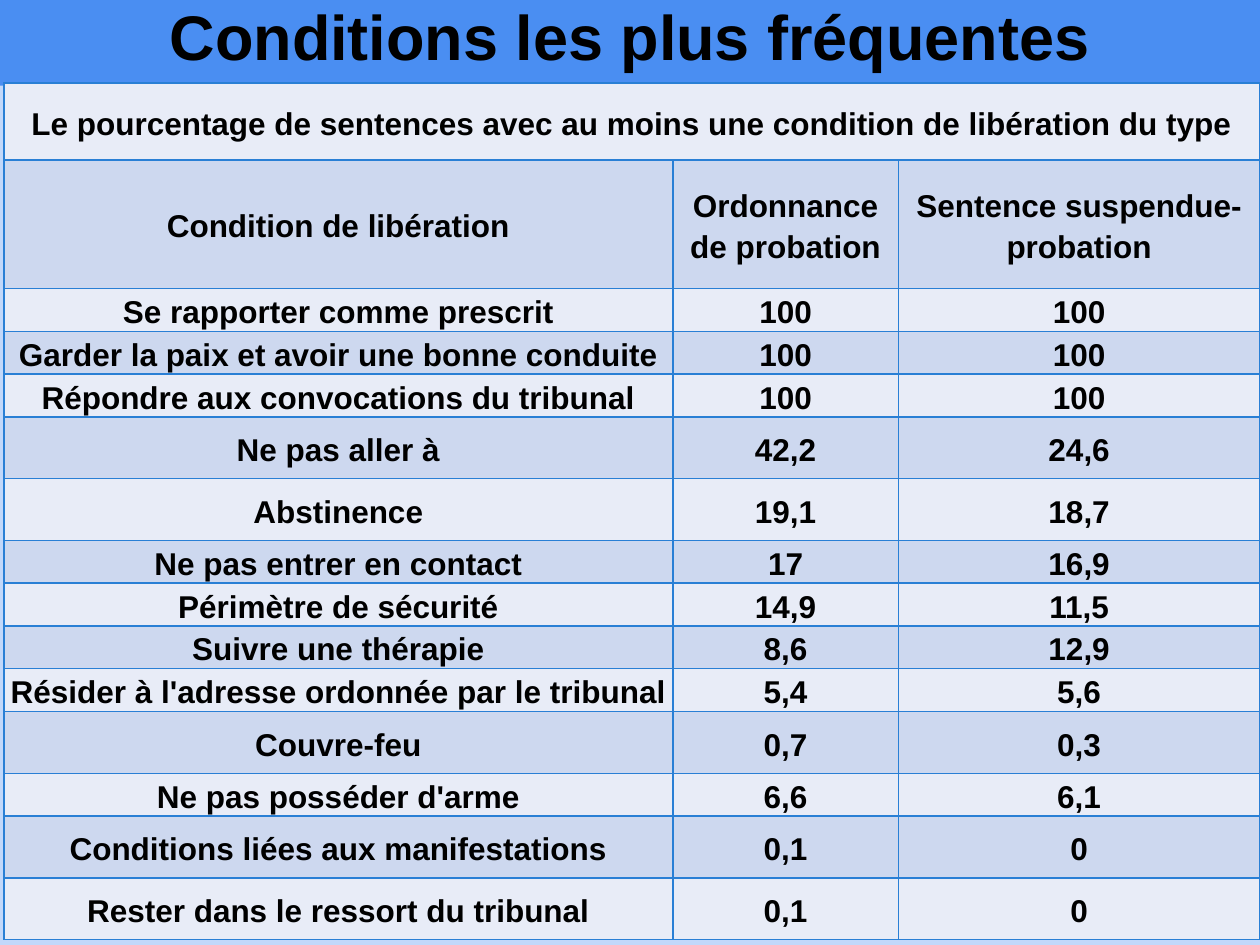
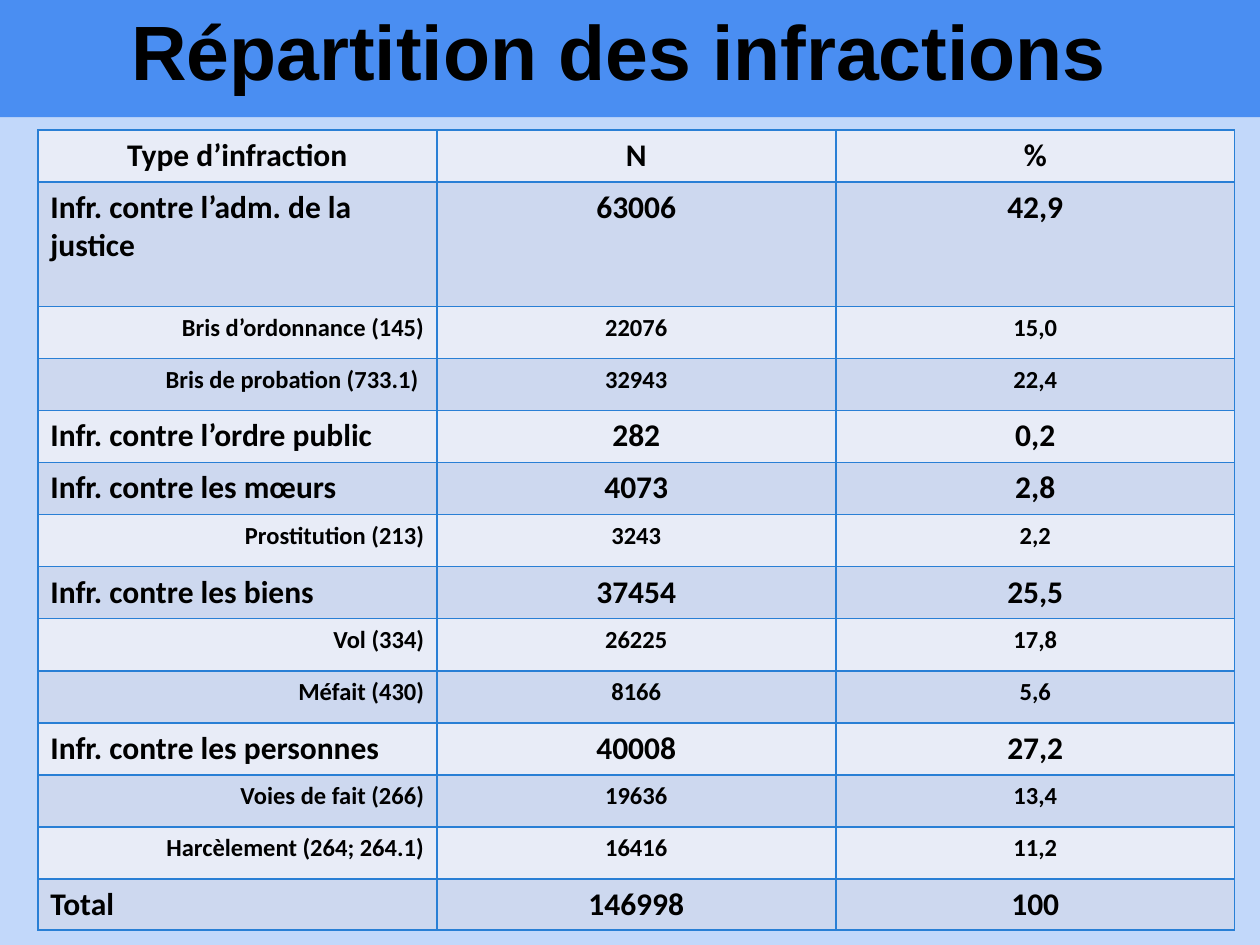
from lxml import etree
from pptx import Presentation
from pptx.dml.color import RGBColor
from pptx.enum.text import MSO_ANCHOR, MSO_AUTO_SIZE, PP_ALIGN
from pptx.oxml.ns import qn
from pptx.util import Inches, Pt

LEFT, CENTER, RIGHT = PP_ALIGN.LEFT, PP_ALIGN.CENTER, PP_ALIGN.RIGHT
TOP, MIDDLE = MSO_ANCHOR.TOP, MSO_ANCHOR.MIDDLE
NO_AUTOFIT = MSO_AUTO_SIZE.NONE
TITLE_ONLY = 5

COLORS = {
    "background": "C2D8FA",
    "band": "4A8EF2",
    "text": "000000",
    "light_row": "E8ECF7",
    "dark_row": "CDD8EF",
    "border": "297FD5",
}

CONDITIONS = [
    ("Le pourcentage de sentences avec au moins une condition de libération du type", "", ""),
    ("Condition de libération", "Ordonnance de probation", "Sentence suspendue- probation"),
    ("Se rapporter comme prescrit", "100", "100"),
    ("Garder la paix et avoir une bonne conduite", "100", "100"),
    ("Répondre aux convocations du tribunal", "100", "100"),
    ("Ne pas aller à", "42,2", "24,6"),
    ("Abstinence", "19,1", "18,7"),
    ("Ne pas entrer en contact", "17", "16,9"),
    ("Périmètre de sécurité", "14,9", "11,5"),
    ("Suivre une thérapie", "8,6", "12,9"),
    ("Résider à l'adresse ordonnée par le tribunal", "5,4", "5,6"),
    ("Couvre-feu", "0,7", "0,3"),
    ("Ne pas posséder d'arme", "6,6", "6,1"),
    ("Conditions liées aux manifestations", "0,1", "0"),
    ("Rester dans le ressort du tribunal", "0,1", "0"),
]
TALL_CONDITIONS = {
    "Ne pas aller à", "Abstinence", "Couvre-feu",
    "Conditions liées aux manifestations", "Rester dans le ressort du tribunal",
}

OFFENCES = [
    ("Type d’infraction", "N", "%"),
    ("Infr. contre l’adm. de la justice", "63006", "42,9"),
    ("Bris d’ordonnance (145)", "22076", "15,0"),
    ("Bris de probation (733.1) ", "32943", "22,4"),
    ("Infr. contre l’ordre public", "282", "0,2"),
    ("Infr. contre les mœurs", "4073", "2,8"),
    ("Prostitution (213)", "3243", "2,2"),
    ("Infr. contre les biens", "37454", "25,5"),
    ("Vol (334)", "26225", "17,8"),
    ("Méfait (430)", "8166", "5,6"),
    ("Infr. contre les personnes", "40008", "27,2"),
    ("Voies de fait (266)", "19636", "13,4"),
    ("Harcèlement (264; 264.1)", "16416", "11,2"),
    ("Total", "146998", "100"),
]


def rgb(name):
    return RGBColor.from_string(COLORS[name])


class DeckBuilder:
    def __init__(self):
        self.deck = Presentation()
        self.deck.slide_width, self.deck.slide_height = Inches(10), Inches(7.5)
        self.page = None

    def add_page(self, title, band_height, size):
        """Start a slide with its title band."""
        self.page = self.deck.slides.add_slide(self.deck.slide_layouts[TITLE_ONLY])
        background = self.page.background.fill
        background.solid()
        background.fore_color.rgb = rgb("background")
        box = self.page.shapes.title
        box.left, box.top = Inches(0), Inches(0)
        box.width, box.height = Inches(10), Inches(band_height)
        box.fill.solid()
        box.fill.fore_color.rgb = rgb("band")
        frame = box.text_frame
        frame.text = title
        frame.auto_size = NO_AUTOFIT
        frame.vertical_anchor = MIDDLE
        self.format_paragraph(frame.paragraphs[0], "Arial", size, CENTER, 0.8)

    def format_paragraph(self, para, font_name, size, align, line_spacing=1.0):
        para.alignment = align
        para.line_spacing = line_spacing
        font = para.font
        font.name, font.size, font.bold = font_name, Pt(size), True
        font.color.rgb = rgb("text")

    def add_table(self, left, top, column_widths, row_heights):
        """Add an empty table with bordered, alternating rows."""
        table = self.page.shapes.add_table(
            len(row_heights), len(column_widths), Inches(left), Inches(top),
            Inches(sum(column_widths)), Inches(sum(row_heights))).table
        table.first_row = table.horz_banding = False
        for column, width in zip(table.columns, column_widths):
            column.width = Inches(width)
        for index, (row, height) in enumerate(zip(table.rows, row_heights)):
            row.height = Inches(height)
            for cell in row.cells:
                self.add_borders(cell)
                cell.fill.solid()
                cell.fill.fore_color.rgb = rgb("dark_row" if index % 2 else "light_row")
        return table

    def add_borders(self, cell):
        properties = cell._tc.get_or_add_tcPr()
        for side in ("a:lnL", "a:lnR", "a:lnT", "a:lnB"):
            line = etree.SubElement(properties, qn(side), w=str(Pt(1)))
            fill = etree.SubElement(line, qn("a:solidFill"))
            etree.SubElement(fill, qn("a:srgbClr"), val=COLORS["border"])

    def write_cell(self, cell, text, font_name, size, align, anchor=TOP, line_spacing=1.0):
        cell.text = text
        cell.vertical_anchor = anchor
        self.format_paragraph(cell.text_frame.paragraphs[0], font_name, size, align, line_spacing)


def build_conditions(builder):
    builder.add_page("Conditions les plus fréquentes", 0.68, 36)
    heights = [0.61, 1.02] + [0.49 if row[0] in TALL_CONDITIONS else 0.34
                              for row in CONDITIONS[2:]]
    table = builder.add_table(0.03, 0.66, (5.31, 1.79, 2.87), heights)
    table.cell(0, 0).merge(table.cell(0, 2))
    for row, texts in zip(table.rows, CONDITIONS):
        for cell, text in zip(row.cells, texts):
            cell.margin_left = cell.margin_right = Inches(0.05)
            cell.margin_top = cell.margin_bottom = Inches(0)
            if not cell.is_spanned:
                builder.write_cell(cell, text, "Arial", 18, CENTER, MIDDLE, 1.15)


def build_offences(builder):
    builder.add_page("Répartition des infractions ", 0.93, 44)
    regular = (6.34 - 0.99 - 0.39) / 12
    heights = [regular, 0.99] + [regular] * 11 + [0.39]
    table = builder.add_table(0.3, 1.03, [9.5 / 3] * 3, heights)
    for index, (row, texts) in enumerate(zip(table.rows, OFFENCES)):
        is_detail = "(" in texts[0]
        label_align = CENTER if index == 0 else RIGHT if is_detail else LEFT
        for cell, text, align in zip(row.cells, texts, (label_align, CENTER, CENTER)):
            builder.write_cell(cell, text, "Calibri", 14 if is_detail else 18, align)


def main():
    builder = DeckBuilder()
    build_conditions(builder)
    build_offences(builder)
    builder.deck.save("out.pptx")


if __name__ == "__main__":
    main()
